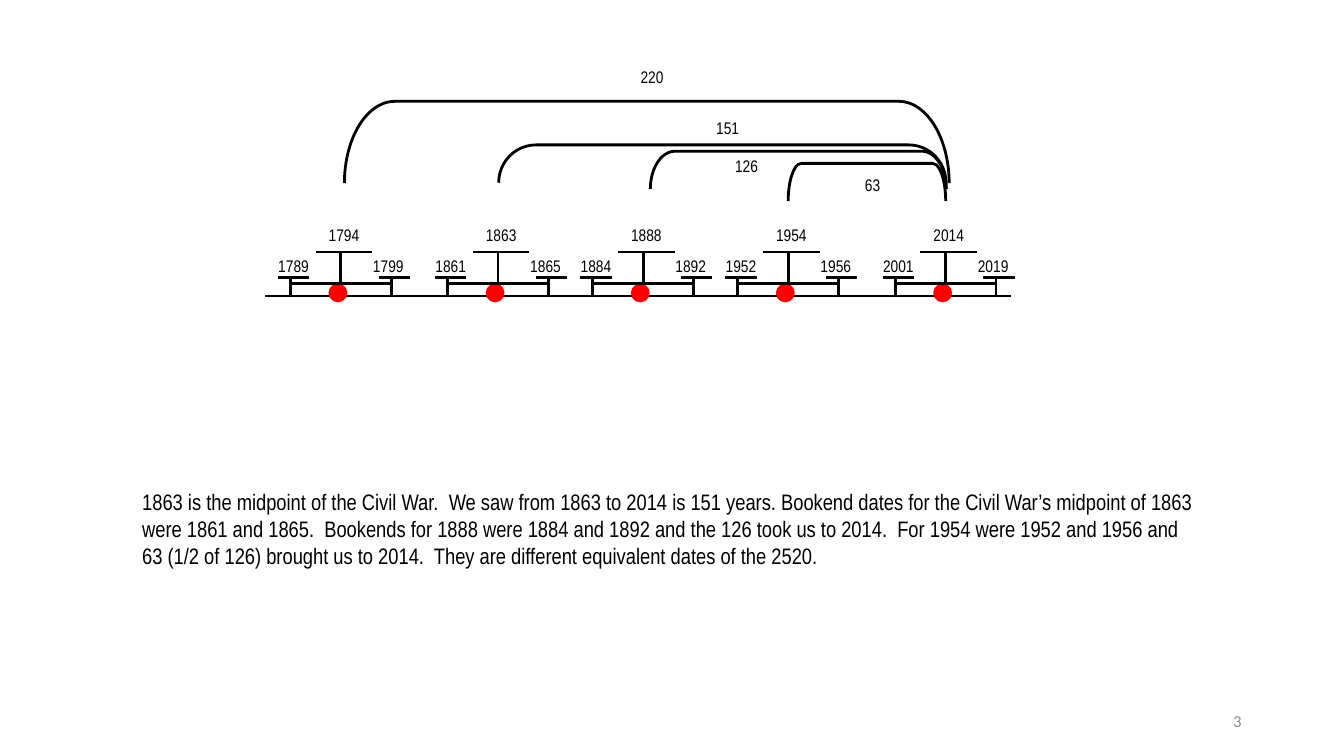
from lxml import etree
from pptx import Presentation
from pptx.dml.color import RGBColor
from pptx.enum.shapes import MSO_CONNECTOR, MSO_SHAPE
from pptx.enum.text import MSO_ANCHOR, PP_ALIGN
from pptx.oxml.ns import qn
from pptx.util import Pt

STRAIGHT = MSO_CONNECTOR.STRAIGHT
DOT, BRACKET = MSO_SHAPE.OVAL, MSO_SHAPE.LEFT_BRACKET
LEFT, CENTER, RIGHT = PP_ALIGN.LEFT, PP_ALIGN.CENTER, PP_ALIGN.RIGHT
TOP, MIDDLE = MSO_ANCHOR.TOP, MSO_ANCHOR.MIDDLE

# Content
COLORS = {"ink": "000000", "dot": "FF0000", "page": "8C8C8C"}
# Stem x, opening bookend, midpoint, closing bookend
EVENTS = [
    (243.4, "1789", "1794", "1799"),
    (355.7, "1861", "1863", "1865"),
    (459.4, "1884", "1888", "1892"),
    (563, "1952", "1954", "1956"),
    (675.4, "2001", "2014", "2019"),
]
# Years, label (left, top), bracket as seen (left, top, width, height), corner
SPANS = [
    ("151", (499.5, 81), (356.2, 103.5, 319.5, 27), 0.986),
    ("220", (445.5, 45), (246, 72.4, 432, 58.5), 0.615),
    ("63", (603, 121.5), (563, 116.7, 112.5, 27), 0.347),
    ("126", (513, 108), (464.5, 108, 211.5, 27), 0.653),
]
EXPLANATION = (
    "1863 is the midpoint of the Civil War.  We saw from 1863 to 2014 is 151 years. "
    "Bookend dates for the Civil War’s midpoint of 1863 were 1861 and 1865.  "
    "Bookends for 1888 were 1884 and 1892 and the 126 took us to 2014.  "
    "For 1954 were 1952 and 1956 and 63 (1/2 of 126) brought us to 2014.  "
    "They are different equivalent dates of the 2520."
)
PAGE_NUMBER = "3"

# Timeline levels and sizes
CAP_Y, BOOKEND_Y, BAR_Y, AXIS_Y = 180, 198, 202.5, 211.5
REACH = 36
LABEL_W, LABEL_H = 40.5, 22.5
DOT_SIZE = 13.5

prs = Presentation()
prs.slide_width, prs.slide_height = Pt(960), Pt(540)
slide = prs.slides.add_slide(prs.slide_layouts[6])
shapes = slide.shapes


def color(name):
    return RGBColor.from_string(COLORS[name])


def add_line(x1, y1, x2, y2):
    line = shapes.add_connector(STRAIGHT, Pt(x1), Pt(y1), Pt(x2), Pt(y2))
    line.line.color.rgb = color("ink")
    line.line.width = Pt(2)
    etree.SubElement(line._element.spPr, qn("a:effectLst"))


def add_text(text, left, top, width, height, size=12, font="Arial Narrow",
             ink="ink", align=CENTER, anchor=TOP, inset=(3, 3)):
    box = shapes.add_textbox(Pt(left), Pt(top), Pt(width), Pt(height))
    frame = box.text_frame
    frame.word_wrap = True
    frame.vertical_anchor = anchor
    frame.margin_left = frame.margin_right = Pt(inset[0])
    frame.margin_top = frame.margin_bottom = Pt(inset[1])
    paragraph = frame.paragraphs[0]
    paragraph.text = text
    paragraph.alignment = align
    paragraph.font.size = Pt(size)
    paragraph.font.name = font
    paragraph.font.color.rgb = color(ink)


def add_event(x, opening, midpoint, closing):
    # Midpoint stem with its cap, then the two bookends
    add_line(x, CAP_Y, x, AXIS_Y)
    add_line(x - 18, CAP_Y, x + 22.5, CAP_Y)
    for bookend, shelf in ((x - REACH, x - 45), (x + REACH, x + 27)):
        add_line(bookend, BOOKEND_Y, bookend, AXIS_Y)
        add_line(shelf, BOOKEND_Y, shelf + 22.5, BOOKEND_Y)
    add_text(midpoint, x - 18, CAP_Y - LABEL_H, LABEL_W, LABEL_H)
    add_text(opening, x - 54, CAP_Y, LABEL_W, BOOKEND_Y - CAP_Y)
    add_text(closing, x + 13.7, CAP_Y, LABEL_W, BOOKEND_Y - CAP_Y)

    dot = shapes.add_shape(DOT, Pt(x - 8.8), Pt(BAR_Y), Pt(DOT_SIZE), Pt(DOT_SIZE))
    dot.shadow.inherit = False
    dot.fill.solid()
    dot.fill.fore_color.rgb = color("dot")
    dot.line.fill.background()
    add_line(x - REACH, BAR_Y, x + REACH, BAR_Y)


def add_span(years, label_at, seen, corner):
    left, top, width, height = seen
    # A quarter turn swaps width and height about the same centre
    shift = (width - height) / 2
    bracket = shapes.add_shape(BRACKET, Pt(left + shift), Pt(top - shift),
                               Pt(height), Pt(width))
    bracket.rotation = 90
    bracket.adjustments[0] = corner
    bracket.shadow.inherit = False
    bracket.fill.background()
    bracket.line.color.rgb = color("ink")
    bracket.line.width = Pt(2)
    add_text(years, *label_at, LABEL_W, LABEL_H)


# Page number and explanation
add_text(PAGE_NUMBER, 678, 500.5, 216, 28.75, font="Calibri", ink="page",
         align=RIGHT, anchor=MIDDLE, inset=(7.2, 3.6))
add_text(EXPLANATION, 94.5, 345, 772, 87, size=16, align=LEFT, inset=(7.2, 3.6))

# Timeline
add_line(189.5, AXIS_Y, 722, AXIS_Y)
for event in EVENTS:
    add_event(*event)

# Spans of years up to the last event
for span in SPANS:
    add_span(*span)

prs.save("out.pptx")
